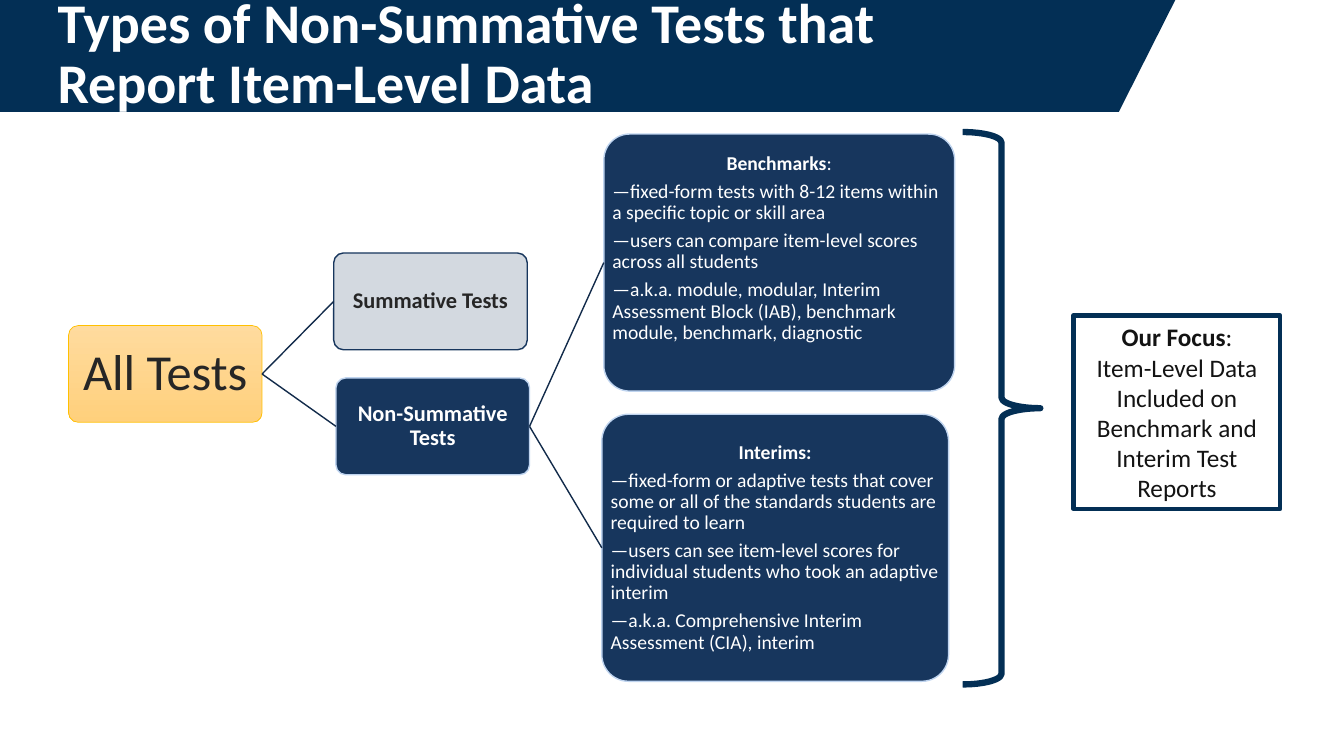
"""Build a slide that sorts tests into types and marks the ones in focus."""
from dataclasses import dataclass
from typing import NamedTuple, Optional

from lxml.etree import SubElement
from pptx import Presentation
from pptx.dml.color import RGBColor
from pptx.enum.shapes import MSO_CONNECTOR, MSO_SHAPE
from pptx.enum.text import MSO_ANCHOR, MSO_AUTO_SIZE, PP_ALIGN
from pptx.oxml.ns import qn
from pptx.util import Inches, Pt

BANNER_NAVY = RGBColor(0x03, 0x2F, 0x55)
BOX_NAVY = RGBColor(0x17, 0x36, 0x5D)
BRANCH_NAVY = RGBColor(0x12, 0x2B, 0x4A)
PALE_BLUE = RGBColor(0xBF, 0xD4, 0xEF)
GOLD = RGBColor(0xFF, 0xC0, 0x00)
GOLD_TOP = RGBColor(0xFF, 0xDB, 0x9E)
GOLD_BOTTOM = RGBColor(0xFF, 0xD0, 0x7C)
WHITE = RGBColor(0xFF, 0xFF, 0xFF)
CHARCOAL = RGBColor(0x26, 0x26, 0x26)
BLACK = RGBColor(0x13, 0x13, 0x13)
FONT = "Calibri"
WIDTH, HEIGHT = Inches(13.333), Inches(7.5)


class Area(NamedTuple):
    """A rectangle in percent of the slide's width and height."""
    left: float
    top: float
    width: float
    height: float


class Line(NamedTuple):
    """A paragraph with a bold lead and a plain rest."""
    bold: str = ""
    plain: str = ""
    align: PP_ALIGN = PP_ALIGN.LEFT


@dataclass(frozen=True)
class Box:
    """A rounded box of the tree, with the name of its parent."""
    name: str
    area: Area
    lines: list[Line]
    size: float = 16
    color: RGBColor = WHITE
    border: RGBColor = PALE_BLUE
    border_width: float = 1
    inset: float = 0.01
    bottom: float = 0.01
    parent: Optional[str] = None
    opacity: int = 100
    gradient: bool = False


CENTER = PP_ALIGN.CENTER
BOXES = [
    Box("All", Area(5.1, 43.07, 14.4, 12.8), [Line(plain="All Tests", align=CENTER)],
        size=36, color=CHARCOAL, border=GOLD, border_width=0.5, inset=0.03,
        bottom=0.03, gradient=True),
    Box("Non-Summative", Area(25, 50, 14.4, 12.8),
        [Line("Non-Summative Tests", align=CENTER)], parent="All"),
    Box("Benchmarks", Area(44.93, 17.73, 26.1, 34), [
        Line("Benchmarks", ":", CENTER),
        Line(plain="—fixed-form tests with 8-12 items within a specific topic or skill area"),
        Line(plain="—users can compare item-level scores across all students"),
        Line(plain="—a.k.a. module, modular, Interim Assessment Block (IAB), "
                   "benchmark module, benchmark, diagnostic"),
    ], size=14, bottom=0.29, parent="Non-Summative"),
    Box("Interims", Area(44.78, 54.8, 25.8, 35.33), [
        Line("Interims:", align=CENTER),
        Line(plain="—fixed-form or adaptive tests that cover some or all of the "
                   "standards students are required to learn"),
        Line(plain="—users can see item-level scores for individual students "
                   "who took an adaptive interim"),
        Line(plain="—a.k.a. Comprehensive Interim Assessment (CIA), interim"),
    ], size=14, parent="Non-Summative"),
    Box("Summative", Area(24.83, 33.47, 14.4, 12.8),
        [Line("Summative Tests", align=CENTER)], color=CHARCOAL, border=BOX_NAVY,
        parent="All", opacity=19),
]


def across(share: float) -> int:
    """Return a percentage of the slide's width."""
    return round(WIDTH * share / 100)


def down(share: float) -> int:
    """Return a percentage of the slide's height."""
    return round(HEIGHT * share / 100)


def place(area: Area) -> tuple[int, int, int, int]:
    """Return an area as left, top, width and height."""
    return across(area.left), down(area.top), across(area.width), down(area.height)


def write(shape, lines: list[Line], *, size: float, color: RGBColor,
          spacing: float = 0.9, after: float = 0) -> None:
    """Fill a shape with formatted paragraphs, centred from top to bottom."""
    frame = shape.text_frame
    frame.word_wrap = True
    frame.auto_size = MSO_AUTO_SIZE.NONE
    frame.vertical_anchor = MSO_ANCHOR.MIDDLE
    for index, line in enumerate(lines):
        paragraph = frame.add_paragraph() if index else frame.paragraphs[0]
        paragraph.alignment = line.align
        paragraph.line_spacing = spacing
        paragraph.space_before = Pt(0)
        paragraph.space_after = Pt(after)
        for text, bold in ((line.bold, True), (line.plain, False)):
            for row, part in enumerate(text.split("\n") if text else []):
                if row:
                    paragraph.add_line_break()
                run = paragraph.add_run()
                run.text = part
                run.font.name = FONT
                run.font.size = Pt(size)
                run.font.bold = bold
                run.font.color.rgb = color


def add_outline(slide, kind: MSO_SHAPE, area: Area, color: RGBColor, width: float):
    """Add an unfilled preset shape with a coloured line."""
    shape = slide.shapes.add_shape(kind, *place(area))
    shape.shadow.inherit = False
    shape.fill.background()
    shape.line.color.rgb = color
    shape.line.width = Pt(width)
    return shape


def add_box(slide, box: Box):
    """Add one rounded box of the tree with its text."""
    shape = add_outline(slide, MSO_SHAPE.ROUNDED_RECTANGLE, box.area,
                        box.border, box.border_width)
    shape.adjustments[0] = 0.1
    if box.gradient:
        shape.fill.gradient()
        shape.fill.gradient_angle = 270
        for stop, color in zip(shape.fill.gradient_stops, (GOLD_TOP, GOLD_BOTTOM)):
            stop.color.rgb = color
    else:
        shape.fill.solid()
        shape.fill.fore_color.rgb = BOX_NAVY
    if box.opacity < 100:
        color = shape.element.spPr.find(f"{qn('a:solidFill')}/{qn('a:srgbClr')}")
        SubElement(color, qn("a:alpha"), val=str(box.opacity * 1000))
    frame = shape.text_frame
    frame.margin_left = frame.margin_right = frame.margin_top = Inches(box.inset)
    frame.margin_bottom = Inches(box.bottom)
    write(shape, box.lines, size=box.size, color=box.color, after=box.size * 0.35)
    return shape


def add_branch(slide, parent, child) -> None:
    """Join the right side of a parent to the left side of its child."""
    branch = slide.shapes.add_connector(MSO_CONNECTOR.STRAIGHT, 0, 0, 0, 0)
    branch.begin_connect(parent, 3)
    branch.end_connect(child, 1)
    branch.line.color.rgb = BRANCH_NAVY
    branch.line.width = Pt(1)
    SubElement(branch.element.spPr, qn("a:effectLst"))


def add_banner_title(slide) -> None:
    """Draw the slanted banner and set the title on it."""
    builder = slide.shapes.build_freeform(0, 0)
    corners = [(87.45, 0), (83.25, 14.8), (0, 14.8)]
    builder.add_line_segments([(across(x), down(y)) for x, y in corners], close=True)
    banner = builder.convert_to_shape()
    banner.shadow.inherit = False
    banner.fill.solid()
    banner.fill.fore_color.rgb = BANNER_NAVY
    banner.line.fill.background()
    title = slide.shapes.title
    title.element.addprevious(banner.element)
    title.left, title.top, title.width, title.height = place(Area(3.53, 0.13, 86.25, 14.4))
    write(title, [Line("Types of Non-Summative Tests that\nReport Item-Level Data")],
          size=40, color=WHITE)


def main() -> None:
    """Build and save the presentation."""
    presentation = Presentation()
    presentation.slide_width, presentation.slide_height = WIDTH, HEIGHT
    slide = presentation.slides.add_slide(presentation.slide_layouts[5])
    add_banner_title(slide)
    focus = add_outline(slide, MSO_SHAPE.RECTANGLE, Area(79.88, 41.73, 15.38, 25.6),
                        BANNER_NAVY, 3)
    write(focus, [
        Line("Our Focus", ":", CENTER),
        Line(plain="Item-Level Data Included on Benchmark and Interim Test Reports",
             align=CENTER),
    ], size=18, color=BLACK, spacing=1.0)
    brace = add_outline(slide, MSO_SHAPE.RIGHT_BRACE, Area(71.63, 17.47, 5.78, 73.07),
                        BANNER_NAVY, 4.5)
    brace.adjustments[0] = 0.137
    shapes = {box.name: add_box(slide, box) for box in BOXES}
    for box in BOXES:
        if box.parent:
            add_branch(slide, shapes[box.parent], shapes[box.name])
    presentation.save("out.pptx")


if __name__ == "__main__":
    main()
